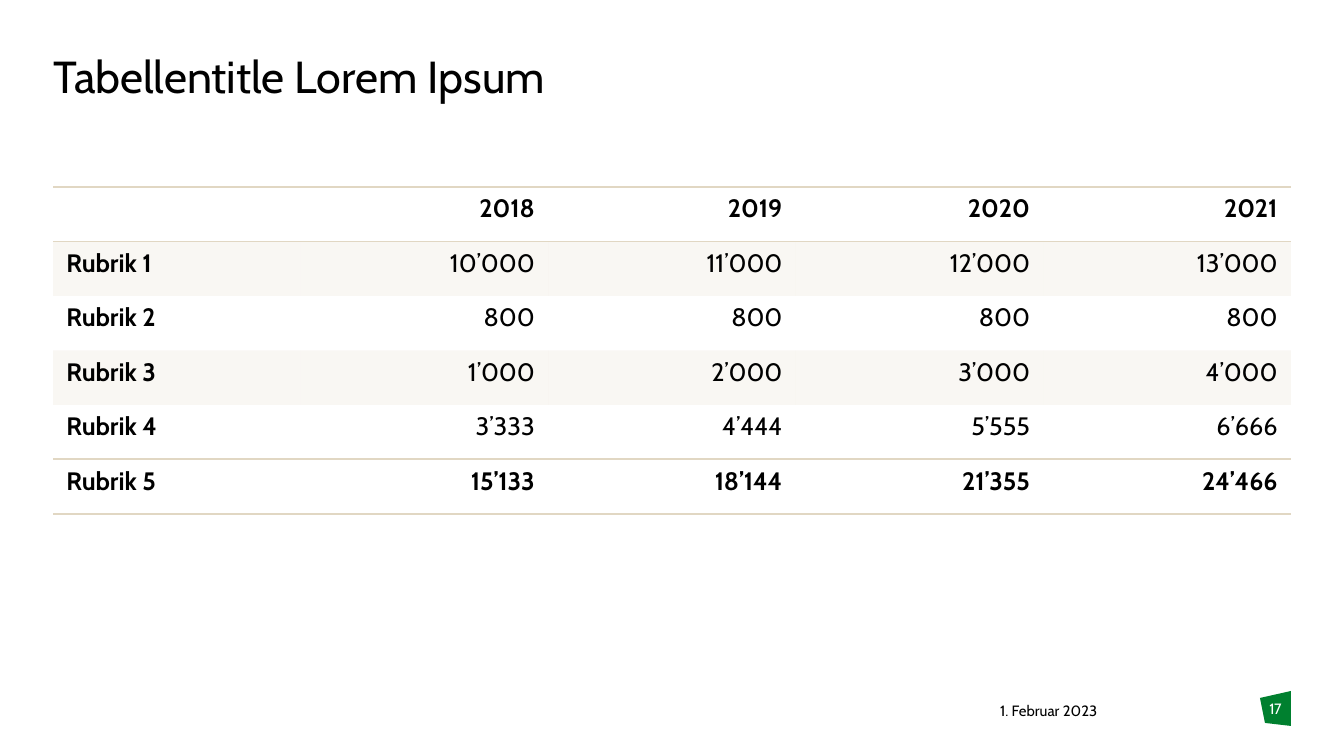
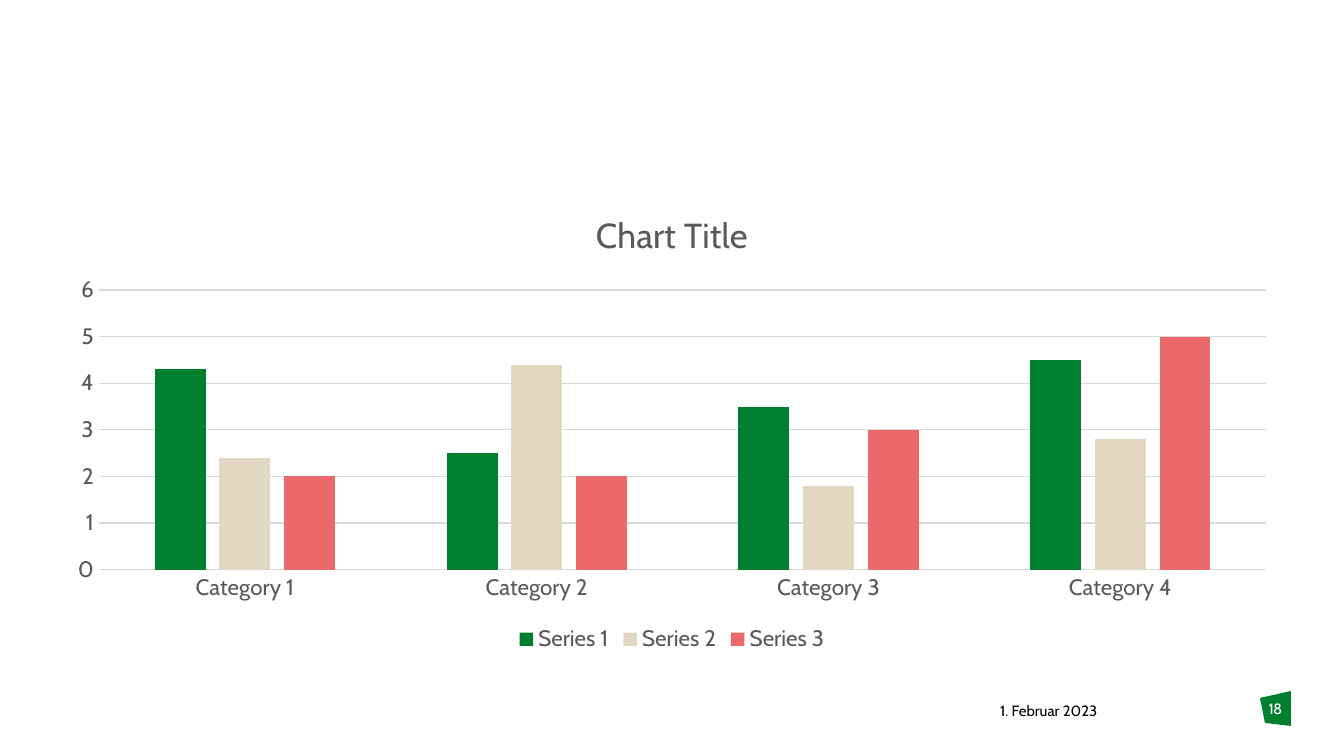
from lxml import etree
from pptx import Presentation
from pptx import util as u
from pptx.chart.data import CategoryChartData
from pptx.dml.color import RGBColor
from pptx.enum import chart as ch, text
from pptx.oxml import parse_xml
from pptx.oxml.ns import nsdecls, qn

SCALE = 9144000 / 1344
FONT = "Cabin"
GREEN = RGBColor(0x00, 0x80, 0x2F)
SAND = RGBColor(0xE1, 0xD7, 0xC3)
CORAL = RGBColor(0xEB, 0x69, 0x69)
BLACK = RGBColor(0, 0, 0)
WHITE = RGBColor(255, 255, 255)
GREY = RGBColor(0x59, 0x59, 0x59)
RULE = RGBColor(0xD9, 0xD9, 0xD9)
PLAIN = "{2D5ABB26-0587-4C30-8999-92F81FD0307C}"

TITLE = (53, 55, 1238, 90)
TABLE = (53, 187, 1238, 327)
CHART = (53, 188, 1238, 470)
DATE = (1000, 702, 173, 27)
BADGE = (1260, 691, 31, 35)

ROWS = [
    ("", "2018", "2019", "2020", "2021"),
    ("Rubrik 1", "10’000", "11’000", "12’000", "13’000"),
    ("Rubrik 2", "800", "800", "800", "800"),
    ("Rubrik 3", "1’000", "2’000", "3’000", "4’000"),
    ("Rubrik 4", "3’333", "4’444", "5’555", "6’666"),
    ("Rubrik 5", "15’133", "18’144", "21’355", "24’466"),
]
CATS = [f"Category {n}" for n in range(1, 5)]
SERIES = [
    ("Series 1", (4.3, 2.5, 3.5, 4.5), GREEN),
    ("Series 2", (2.4, 4.4, 1.8, 2.8), SAND),
    ("Series 3", (2, 2, 3, 5), CORAL),
]


def px(n):
    return u.Emu(round(n * SCALE))


def place(box):
    return [px(n) for n in box]


def style(font, size, color, bold=False):
    font.name, font.size, font.bold = FONT, u.Pt(size), bold
    font.color.rgb = color


def write(frame, words, size, color, align=text.PP_ALIGN.LEFT):
    """Fill a frame without margins, set from its top edge."""
    frame.text = words
    frame.word_wrap = True
    frame.auto_size = text.MSO_AUTO_SIZE.NONE
    frame.vertical_anchor = text.MSO_ANCHOR.TOP
    frame.margin_left = frame.margin_right = 0
    frame.margin_top = frame.margin_bottom = 0
    para = frame.paragraphs[0]
    para.alignment = align
    style(para.runs[0].font, size, color)
    return para


def title(slide, words, box):
    head = slide.shapes.title
    head.left, head.top, head.width, head.height = place(box)
    para = write(head.text_frame, words, 24, BLACK)
    para.line_spacing = 0.9


def footer(slide, page):
    x, y, w, h = BADGE
    pen = slide.shapes.build_freeform(x, y + 7, SCALE)
    pen.add_line_segments([(x + w, y), (x + w, y + h), (x + 5, y + h - 3)])
    badge = pen.convert_to_shape()
    badge.shadow.inherit = False
    badge.fill.solid()
    badge.fill.fore_color.rgb = GREEN
    badge.line.fill.background()

    date = slide.shapes.add_textbox(*place(DATE))
    write(date.text_frame, "1. Februar 2023", 8, BLACK)

    label = slide.shapes.add_textbox(*place((x, y + 9, w, 40)))
    para = write(label.text_frame, str(page), 8, WHITE, text.PP_ALIGN.CENTER)
    para.runs[0].font._element.set("spc", "-30")


def rule(cell):
    """Draw sand lines above and below a cell."""
    props = cell._tc.get_or_add_tcPr()
    for i, side in enumerate(("lnT", "lnB")):
        props.insert(i, parse_xml(
            f'<a:{side} {nsdecls("a")} w="12700"><a:solidFill>'
            f'<a:srgbClr val="{SAND}"/></a:solidFill></a:{side}>'))


def tint(cell):
    cell.fill.solid()
    cell.fill.fore_color.rgb = SAND
    color = cell._tc.tcPr.find(".//" + qn("a:srgbClr"))
    etree.SubElement(color, qn("a:alpha")).set("val", "20000")


def table(slide, box):
    last = len(ROWS) - 1
    grid = slide.shapes.add_table(len(ROWS), len(ROWS[0]), *place(box)).table
    grid._tbl.tblPr.find(qn("a:tableStyleId")).text = PLAIN
    grid.first_row = grid.horz_banding = False
    for r, row in enumerate(ROWS):
        for c, words in enumerate(row):
            cell = grid.cell(r, c)
            if r in (1, 3):
                tint(cell)
            else:
                cell.fill.background()
            if r in (0, last):
                rule(cell)
            if words:
                cell.text = words
                para = cell.text_frame.paragraphs[0]
                if c:
                    para.alignment = text.PP_ALIGN.RIGHT
                bold = r in (0, last) or c == 0
                style(para.runs[0].font, 13.5, BLACK, bold)


def chart(slide, box):
    data = CategoryChartData()
    data.categories = CATS
    for name, vals, _ in SERIES:
        data.add_series(name, vals)
    kind = ch.XL_CHART_TYPE.COLUMN_CLUSTERED
    graph = slide.shapes.add_chart(kind, *place(box), data).chart
    style(graph.font, 10, BLACK)

    graph.has_title = True
    head = graph.chart_title
    head.text_frame.text = "Chart Title"
    head.include_in_layout = False
    style(head.text_frame.paragraphs[0].runs[0].font, 18.6, GREY)

    graph.has_legend = True
    graph.legend.position = ch.XL_LEGEND_POSITION.BOTTOM
    graph.legend.include_in_layout = False
    style(graph.legend.font, 12, GREY)

    cats, vals = graph.category_axis, graph.value_axis
    for axis in (cats, vals):
        axis.major_tick_mark = axis.minor_tick_mark = ch.XL_TICK_MARK.NONE
        style(axis.tick_labels.font, 12, GREY)
    vals.minimum_scale, vals.maximum_scale, vals.major_unit = 0, 6, 1
    vals.format.line.fill.background()
    for line in (cats.format.line, vals.major_gridlines.format.line):
        line.color.rgb = RULE
        line.width = u.Pt(0.75)

    plot = graph.plots[0]
    plot.vary_by_categories = False
    plot.gap_width, plot.overlap = 219, -27
    for bars, (_, _, color) in zip(plot.series, SERIES):
        bars.format.fill.solid()
        bars.format.fill.fore_color.rgb = color
        bars.invert_if_negative = False


def main():
    deck = Presentation()
    deck.slide_width, deck.slide_height = px(1344), px(756)
    only, blank = deck.slide_layouts[5], deck.slide_layouts[6]

    sums = deck.slides.add_slide(only)
    footer(sums, 17)
    title(sums, "Tabellentitle Lorem Ipsum", TITLE)
    table(sums, TABLE)

    bars = deck.slides.add_slide(blank)
    footer(bars, 18)
    chart(bars, CHART)
    deck.save("out.pptx")


if __name__ == "__main__":
    main()
